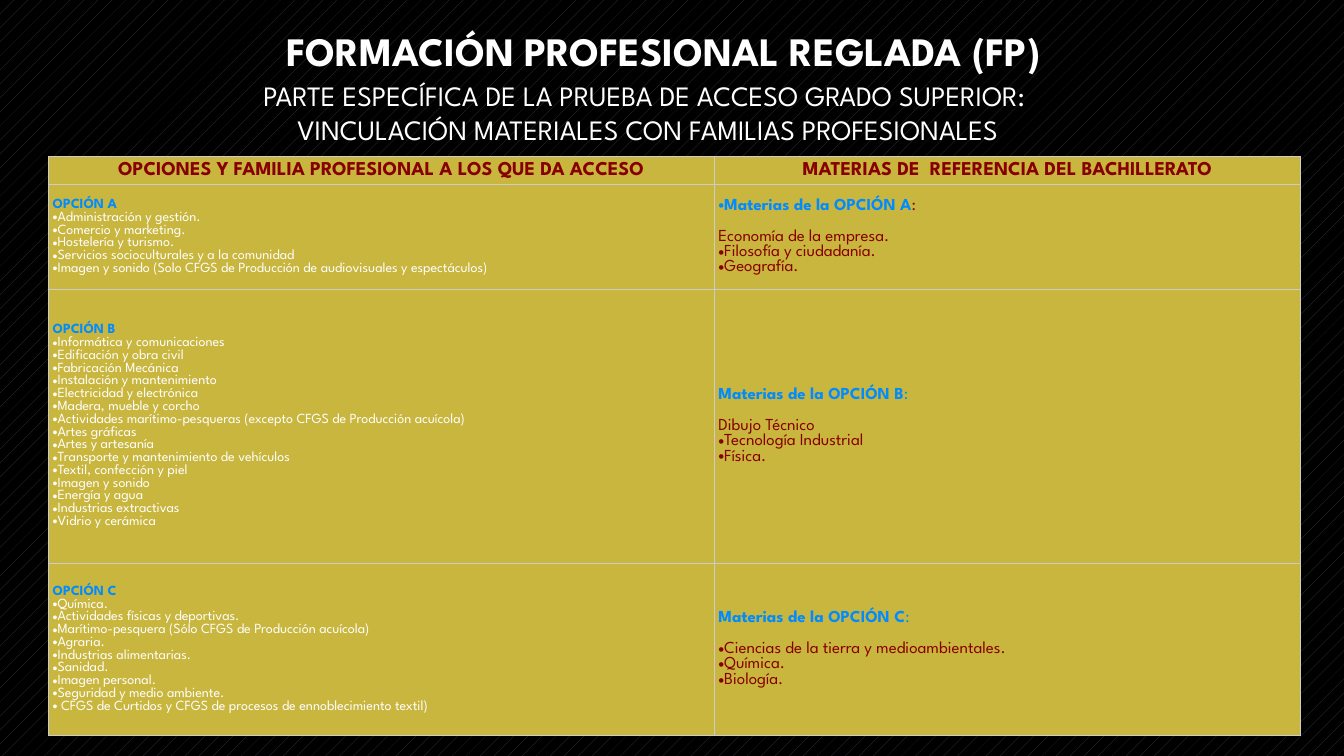
from lxml import etree
from pptx import Presentation
from pptx.dml.color import RGBColor
from pptx.enum.dml import MSO_PATTERN
from pptx.enum.text import MSO_ANCHOR as Anchor, PP_ALIGN as Align
from pptx.oxml.ns import qn
from pptx.util import Pt

WHITE = RGBColor(0xFF, 0xFF, 0xFF)
BLACK = RGBColor(0x00, 0x00, 0x00)
SLATE = RGBColor(0x36, 0x3D, 0x46)
GOLD = RGBColor(0xC9, 0xB6, 0x3F)
MAROON = RGBColor(0x87, 0x00, 0x00)
BLUE = RGBColor(0x00, 0x8C, 0xFF)
BORDER = RGBColor(0xCC, 0xCC, 0xCC)

HEADERS = ["OPCIONES Y FAMILIA PROFESIONAL A LOS QUE DA ACCESO",
           "MATERIAS DE  REFERENCIA DEL BACHILLERATO"]
FAMILIES = {
    "OPCIÓN A": [
        "Administración y gestión.", "Comercio y marketing.", "Hostelería y turismo.",
        "Servicios socioculturales y a la comunidad",
        "Imagen y sonido (Solo CFGS de Producción de audiovisuales y espectáculos)"],
    "OPCIÓN B": [
        "Informática y comunicaciones", "Edificación y obra civil", "Fabricación Mecánica",
        "Instalación y mantenimiento", "Electricidad y electrónica",
        "Madera, mueble y corcho",
        "Actividades marítimo-pesqueras (excepto CFGS de Producción acuícola)",
        "Artes gráficas", "Artes y artesanía", "Transporte y mantenimiento de vehículos",
        "Textil, confección y piel", "Imagen y sonido", "Energía y agua",
        "Industrias extractivas", "Vidrio y cerámica"],
    "OPCIÓN C": [
        "Química.", "Actividades físicas y deportivas.",
        "Marítimo-pesquera (Sólo CFGS de Producción acuícola)", "Agraria.",
        "Industrias alimentarias.", "Sanidad.", "Imagen personal.",
        "Seguridad y medio ambiente.",
        " CFGS de Curtidos y CFGS de procesos de ennoblecimiento textil)"],
}
# Subjects, colour of the heading's colon, bulleted heading, bulleted first subject
SUBJECTS = {
    "OPCIÓN A": (["Economía de la empresa.", "Filosofía y ciudadanía.", "Geografía."],
                 MAROON, True, False),
    "OPCIÓN B": (["Dibujo Técnico", "Tecnología Industrial", "Física."],
                 BLUE, False, False),
    "OPCIÓN C": (["Ciencias de la tierra y medioambientales.", "Química.", "Biología."],
                 BLUE, False, True),
}


class SlideBuilder:
    font_name = "League Spartan"
    bullet_font = "Arial"

    def __init__(self, page):
        self.page = page

    def background(self):
        fill = self.page.background.fill
        fill.patterned()
        fill.pattern = MSO_PATTERN.PERCENT_5
        fill.fore_color.rgb = SLATE
        fill.back_color.rgb = BLACK

    def style(self, font, size, color, bold=False):
        font.name, font.size, font.bold = self.font_name, Pt(size), bold
        font.color.rgb = color

    def title(self, text, left, top, width, height):
        box = self.page.shapes.title
        box.left, box.top, box.width, box.height = map(Pt, (left, top, width, height))
        frame = box.text_frame
        frame.text = text
        frame.vertical_anchor = Anchor.MIDDLE
        para = frame.paragraphs[0]
        para.alignment = Align.CENTER
        self.style(para.font, 28.8, WHITE, True)

    def subtitle(self, lines, left, top, width, height):
        box = self.page.shapes.add_textbox(*map(Pt, (left, top, width, height)))
        frame = box.text_frame
        frame.word_wrap = True
        frame.text = "\n".join(lines)
        for para in frame.paragraphs:
            para.alignment = Align.CENTER
            self.style(para.font, 20, WHITE)

    def table(self, left, top, widths, heights):
        frame = self.page.shapes.add_table(
            len(heights), len(widths), Pt(left), Pt(top), Pt(sum(widths)), Pt(sum(heights)))
        table = frame.table
        table.first_row = table.horz_banding = False
        for column, width in zip(table.columns, widths):
            column.width = Pt(width)
        for row, height in zip(table.rows, heights):
            row.height = Pt(height)
        for cell in table.iter_cells():
            self.format_cell(cell)
        return table

    def format_cell(self, cell):
        cell.margin_left = cell.margin_right = Pt(3)
        cell.margin_top = cell.margin_bottom = Pt(1.5)
        cell.vertical_anchor = Anchor.MIDDLE
        properties = cell._tc.get_or_add_tcPr()
        for side in ("a:lnL", "a:lnR", "a:lnT", "a:lnB"):
            line = etree.SubElement(properties, qn(side), w=str(Pt(0.75)))
            solid = etree.SubElement(line, qn("a:solidFill"))
            etree.SubElement(solid, qn("a:srgbClr"), val=str(BORDER))
        cell.fill.solid()
        cell.fill.fore_color.rgb = GOLD

    def line(self, cell, text, size, color, bold=False, bullet=False):
        """Add a paragraph to the cell, using its empty first one if there is one."""
        frame = cell.text_frame
        para = frame.add_paragraph() if frame.text else frame.paragraphs[0]
        span = para.add_run()
        span.text = text
        self.style(span.font, size, color, bold)
        if bullet:
            properties = para._p.get_or_add_pPr()
            properties.set("marL", "0")
            properties.set("indent", "0")
            etree.SubElement(properties, qn("a:buFont"), typeface=self.bullet_font)
            etree.SubElement(properties, qn("a:buChar"), char="•")
        return para

    def families(self, cell, option):
        self.line(cell, option, 10, BLUE, bold=True)
        for family in FAMILIES[option]:
            self.line(cell, family, 10, WHITE, bullet=True)

    def subjects(self, cell, option):
        names, colon_color, bullet_heading, bullet_first = SUBJECTS[option]
        heading = self.line(cell, f"Materias de la {option}", 12, BLUE, True, bullet_heading)
        colon = heading.add_run()
        colon.text = ":"
        self.style(colon.font, 12, colon_color)
        for index, name in enumerate(names):
            para = self.line(cell, name, 12, MAROON, bullet=bullet_first or index > 0)
            if index == 0:
                para.space_before = Pt(11)


def main():
    deck = Presentation()
    deck.slide_width, deck.slide_height = Pt(960), Pt(540)
    builder = SlideBuilder(deck.slides.add_slide(deck.slide_layouts[5]))
    builder.background()
    builder.title("FORMACIÓN PROFESIONAL REGLADA (FP)", 84, 13.8, 780, 44)
    builder.subtitle(["PARTE ESPECÍFICA DE LA PRUEBA DE ACCESO GRADO SUPERIOR: ",
                      "VINCULACIÓN MATERIALES CON FAMILIAS PROFESIONALES"],
                     137, 52.6, 651.6, 55.4)
    table = builder.table(34.7, 111.8, [475.5, 419], [20, 73.8, 195, 123.5])
    for column, header in enumerate(HEADERS):
        para = builder.line(table.cell(0, column), header, 14, MAROON, bold=True)
        para.alignment = Align.CENTER
    for row, option in enumerate(FAMILIES, start=1):
        builder.families(table.cell(row, 0), option)
        builder.subjects(table.cell(row, 1), option)
    deck.save("out.pptx")


if __name__ == "__main__":
    main()
